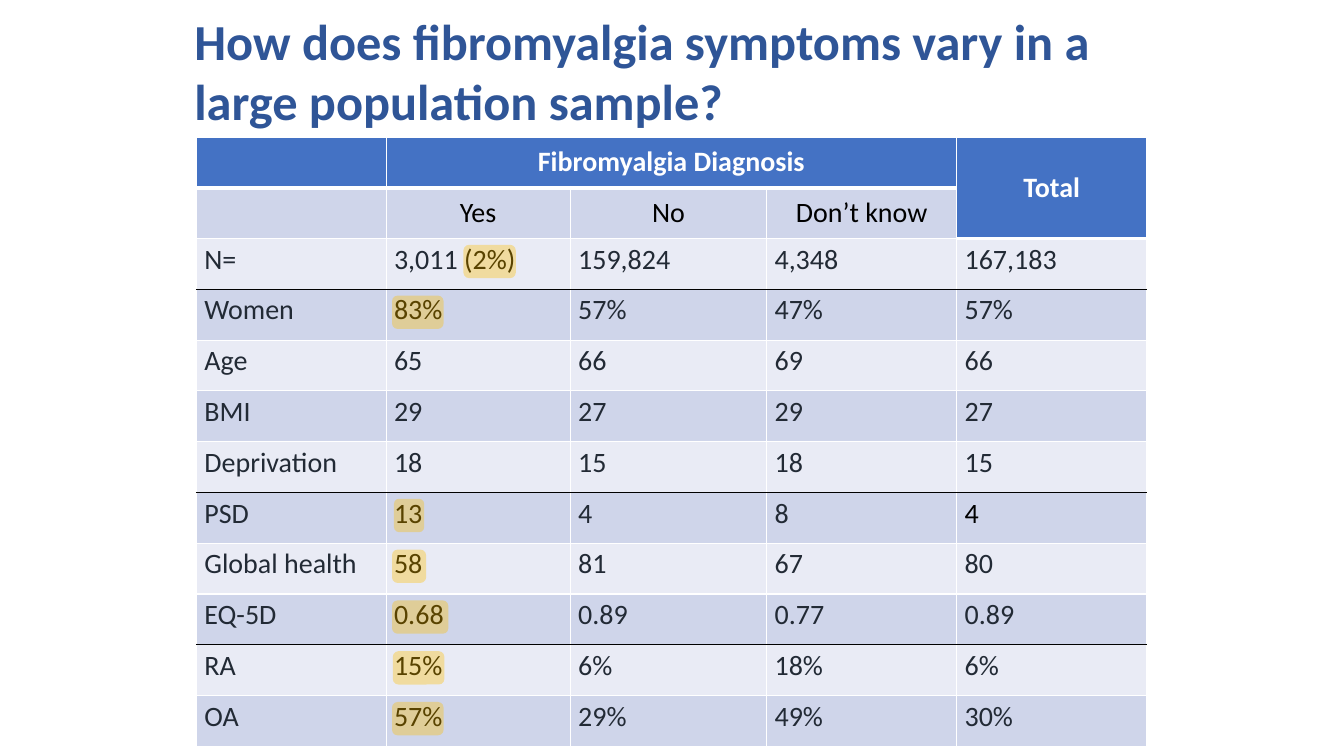
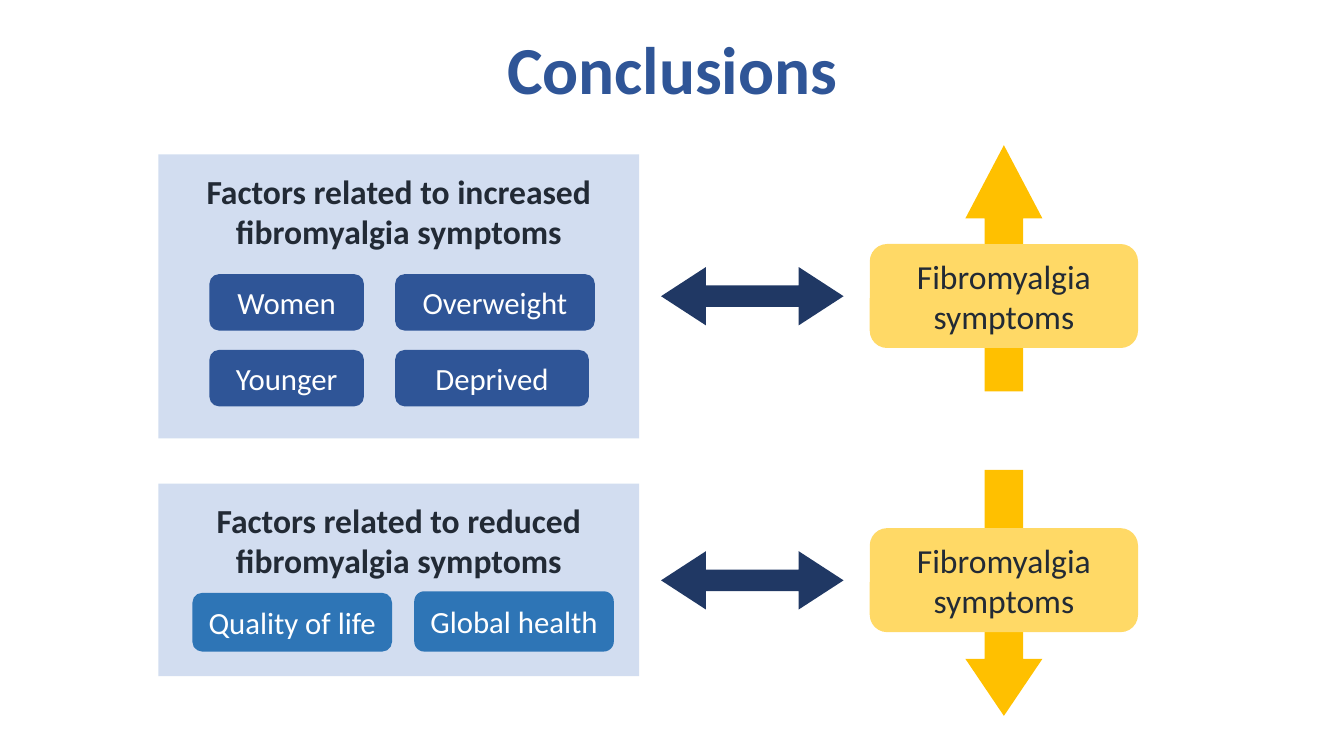
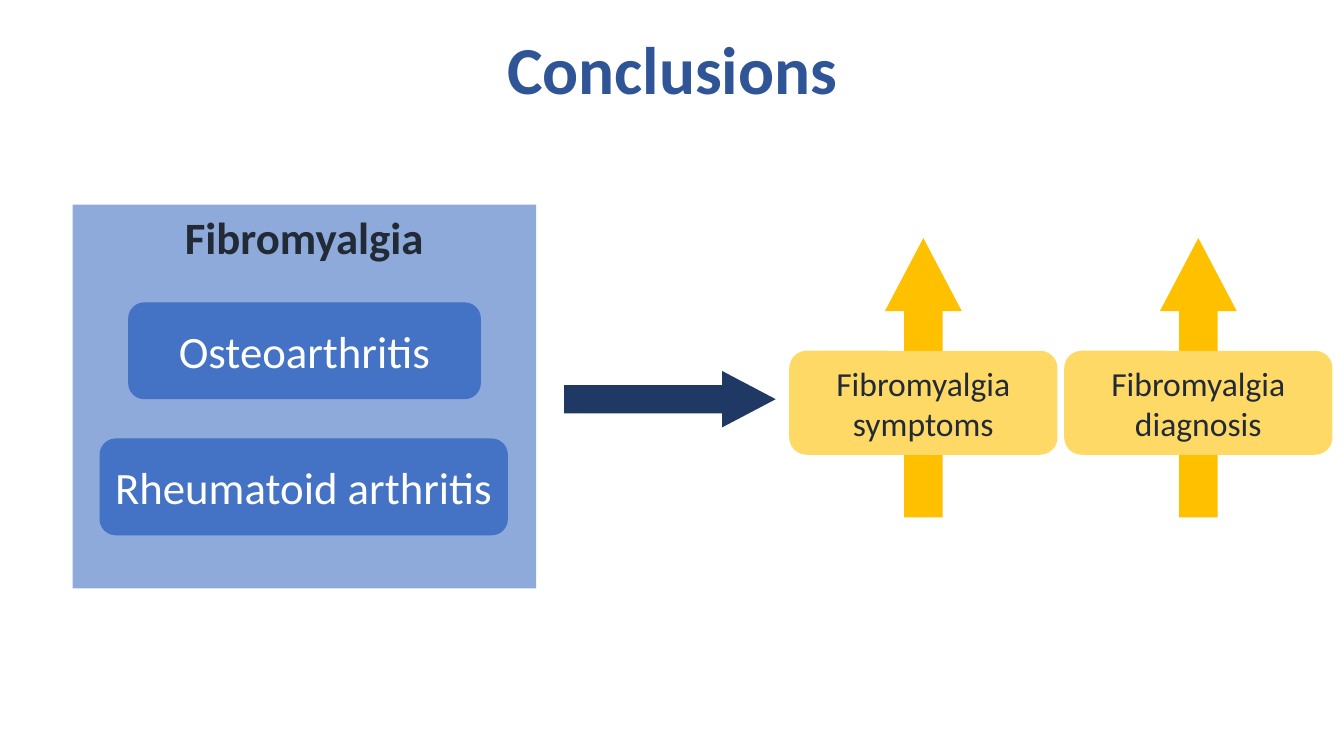
from dataclasses import dataclass
from functools import partial

from lxml import etree
from pptx import Presentation
from pptx import util as u
from pptx.dml.color import RGBColor
from pptx.enum import shapes, text
from pptx.oxml import ns
from pptx.slide import Slide

FONT = "Calibri"
WHITE = RGBColor(0xFF, 0xFF, 0xFF)
BLACK = RGBColor(0x00, 0x00, 0x00)
INK = RGBColor(0x22, 0x2A, 0x35)
TITLE_BLUE = RGBColor(0x2F, 0x55, 0x97)
NAVY = RGBColor(0x20, 0x38, 0x64)
BLUE = RGBColor(0x44, 0x72, 0xC4)
BRIGHT_BLUE = RGBColor(0x2E, 0x75, 0xB6)
PALE_BLUE = RGBColor(0xB4, 0xC7, 0xE7)
BAND_DARK = RGBColor(0xCF, 0xD5, 0xEA)
BAND_LIGHT = RGBColor(0xE9, 0xEB, 0xF5)
GOLD = RGBColor(0xFF, 0xC0, 0x00)
PALE_GOLD = RGBColor(0xFF, 0xD9, 0x66)

SHAPE = shapes.MSO_SHAPE
TOP = text.MSO_ANCHOR.TOP
MIDDLE = text.MSO_ANCHOR.MIDDLE
LEFT = text.PP_ALIGN.LEFT
CENTER = text.PP_ALIGN.CENTER

TABLE_LEFT, TABLE_TOP, ROW_HEIGHT = 4.95, 3.45, 1.28
COLUMN_WIDTHS = (4.78, 4.64, 4.95, 4.79, 4.79)
TABLE_ROWS = (
    ("", "Fibromyalgia Diagnosis", "", "", "Total"),
    ("", "Yes", "No", "Don’t know", ""),
    ("N=", "3,011 (2%)", "159,824", "4,348", "167,183"),
    ("Women", "83%", "57%", "47%", "57%"),
    ("Age", "65", "66", "69", "66"),
    ("BMI", "29", "27", "29", "27"),
    ("Deprivation", "18", "15", "18", "15"),
    ("PSD", "13", "4", "8", "4"),
    ("Global health", "58", "81", "67", "80"),
    ("EQ-5D", "0.68", "0.89", "0.77", "0.89"),
    ("RA", "15%", "6%", "18%", "6%"),
    ("OA", "57%", "29%", "49%", "30%"),
)
GROUP_END_ROWS = (2, 6, 9)
BLACK_CELLS = {(row, 1) for row in (3, 7, 8, 9, 10, 11)} | {(7, 4)}


@dataclass(frozen=True)
class Highlight:
    row: int
    left: float
    width: float


HIGHLIGHTS = (
    Highlight(2, 11.68, 1.32),
    Highlight(3, 9.88, 1.3),
    Highlight(7, 9.93, 0.76),
    Highlight(8, 9.88, 0.86),
    Highlight(9, 9.88, 1.42),
    Highlight(10, 9.9, 1.3),
    Highlight(11, 9.88, 1.3),
)


@dataclass(frozen=True)
class Block:
    left: float
    top: float
    width: float
    height: float
    fill: RGBColor
    label: str = ""
    size: float = 24
    color: RGBColor = WHITE
    bold: bool = False
    kind: SHAPE = SHAPE.ROUNDED_RECTANGLE
    adjustments: tuple[float, ...] = ()
    opacity: int = 100
    anchor: text.MSO_ANCHOR = MIDDLE
    inset_top: float = 0.13


Panel = partial(Block, color=INK, bold=True, adjustments=(0.0,), opacity=60, anchor=TOP)
Chip = partial(Block, size=22)
Badge = partial(Block, width=6.76, height=2.62, fill=PALE_GOLD, color=INK)
DoubleArrow = partial(Block, left=16.66, width=4.6, height=1.47, fill=NAVY,
                      kind=SHAPE.LEFT_RIGHT_ARROW, adjustments=(0.37, 0.77))


def style_text(paragraph, size: float, color: RGBColor, bold: bool = False,
               alignment: text.PP_ALIGN = CENTER) -> None:
    paragraph.alignment = alignment
    for run in paragraph.runs:
        run.font.name = FONT
        run.font.size = u.Pt(size)
        run.font.bold = bold
        run.font.color.rgb = color


def add_block(slide: Slide, block: Block) -> None:
    shape = slide.shapes.add_shape(block.kind, u.Cm(block.left), u.Cm(block.top),
                                   u.Cm(block.width), u.Cm(block.height))
    shape.shadow.inherit = False
    for index, value in enumerate(block.adjustments):
        shape.adjustments[index] = value
    shape.fill.solid()
    shape.fill.fore_color.rgb = block.fill
    shape.line.fill.background()
    if block.opacity < 100:
        color = shape.element.spPr.find(".//" + ns.qn("a:srgbClr"))
        etree.SubElement(color, ns.qn("a:alpha"), val=str(block.opacity * 1000))
    if block.label:
        frame = shape.text_frame
        frame.word_wrap = True
        frame.vertical_anchor = block.anchor
        frame.margin_top = u.Cm(block.inset_top)
        frame.text = block.label
        style_text(frame.paragraphs[0], block.size, block.color, block.bold)


def add_outcome(slide: Slide, label: str, left: float, top: float, arrow_top: float,
                arrow_height: float, kind: SHAPE, head: float) -> None:
    add_block(slide, Block(left + 2.41, arrow_top, 1.94, arrow_height, GOLD,
                           kind=kind, adjustments=(0.5, head)))
    add_block(slide, Badge(left=left, top=top, label=label))


def add_title(slide: Slide, title: str, left: float, top: float, width: float, height: float,
              size: float, alignment: text.PP_ALIGN, anchor: text.MSO_ANCHOR,
              spacing: float) -> None:
    box = slide.shapes.add_textbox(u.Cm(left), u.Cm(top), u.Cm(width), u.Cm(height))
    frame = box.text_frame
    frame.word_wrap = True
    frame.vertical_anchor = anchor
    frame.text = title
    frame.paragraphs[0].line_spacing = spacing
    style_text(frame.paragraphs[0], size, TITLE_BLUE, True, alignment)


add_conclusions_title = partial(add_title, title="Conclusions", left=2.34, top=0.08, width=29.21,
                                height=3.53, size=48, alignment=CENTER, anchor=MIDDLE, spacing=0.9)


def add_border(cell, index: int, side: str, color: RGBColor, width: float) -> None:
    line = etree.Element(ns.qn(f"a:ln{side}"), w=str(u.Pt(width)))
    fill = etree.SubElement(line, ns.qn("a:solidFill"))
    etree.SubElement(fill, ns.qn("a:srgbClr"), val=str(color))
    cell._tc.get_or_add_tcPr().insert(index, line)


def edge_below(row: int, is_header: bool) -> tuple[RGBColor, float]:
    if row in GROUP_END_ROWS:
        return BLACK, 1
    return WHITE, 3 if is_header else 1


def is_header_cell(row: int, column: int) -> bool:
    return row == 0 or (row == 1 and column == 4)


def style_cell(cell, row: int, column: int) -> None:
    header = is_header_cell(row, column)
    cell.fill.solid()
    cell.fill.fore_color.rgb = BLUE if header else (BAND_DARK if row % 2 else BAND_LIGHT)
    cell.margin_left = cell.margin_right = u.Cm(0.2)
    cell.margin_top = cell.margin_bottom = u.Cm(0.1)
    cell.vertical_anchor = MIDDLE if row < 2 else TOP
    color = WHITE if header else BLACK if row == 1 or (row, column) in BLACK_CELLS else INK
    style_text(cell.text_frame.paragraphs[0], 20, color, header, CENTER if row < 2 else LEFT)
    borders = (
        ("L", (WHITE, 1)),
        ("R", (WHITE, 1)),
        ("T", edge_below(row - 1, row > 0 and is_header_cell(row - 1, column))),
        ("B", edge_below(row, header)),
    )
    for index, (side, edge) in enumerate(borders):
        add_border(cell, index, side, *edge)


def add_symptom_table(slide: Slide) -> None:
    table = slide.shapes.add_table(
        len(TABLE_ROWS), len(COLUMN_WIDTHS), u.Cm(TABLE_LEFT), u.Cm(TABLE_TOP),
        u.Cm(sum(COLUMN_WIDTHS)), u.Cm(ROW_HEIGHT * len(TABLE_ROWS))).table
    for column, width in zip(table.columns, COLUMN_WIDTHS):
        column.width = u.Cm(width)
    for row_index, values in enumerate(TABLE_ROWS):
        table.rows[row_index].height = u.Cm(ROW_HEIGHT)
        for column_index, value in enumerate(values):
            cell = table.cell(row_index, column_index)
            cell.text = value
            style_cell(cell, row_index, column_index)
    count = table.cell(2, 1).text_frame.paragraphs[0]
    count.text = "3,011 "
    count.add_run().text = "(2%)"
    style_text(count, 20, INK, alignment=LEFT)
    count.runs[1].font.color.rgb = BLACK
    table.cell(0, 1).merge(table.cell(0, 3))
    table.cell(0, 4).merge(table.cell(1, 4))


def build_symptoms(slide: Slide) -> None:
    add_symptom_table(slide)
    add_title(slide, "How does fibromyalgia symptoms vary in a large population sample?",
              4.65, 0.13, 25.91, 3.33, 36, LEFT, TOP, 1.0)
    for mark in HIGHLIGHTS:
        top = TABLE_TOP + mark.row * ROW_HEIGHT + 0.16
        add_block(slide, Block(mark.left, top, mark.width, 0.84, GOLD, opacity=35))


def build_factors(slide: Slide) -> None:
    add_conclusions_title(slide)
    for direction, top, height in (("increased", 3.89, 7.16), ("reduced", 12.19, 4.85)):
        add_block(slide, Panel(3.99, top, 12.12, height, PALE_BLUE,
                               f"Factors related to {direction} fibromyalgia symptoms",
                               inset_top=0.41))
    chips = (
        Chip(5.28, 6.91, 3.89, 1.42, TITLE_BLUE, "Women"),
        Chip(9.96, 6.91, 5.03, 1.42, TITLE_BLUE, "Overweight"),
        Chip(5.28, 8.82, 3.89, 1.42, TITLE_BLUE, "Younger"),
        Chip(9.96, 8.82, 4.88, 1.42, TITLE_BLUE, "Deprived"),
        Chip(4.85, 14.94, 5.03, 1.48, BRIGHT_BLUE, "Quality of life"),
        Chip(10.44, 14.9, 5.03, 1.52, BRIGHT_BLUE, "Global health"),
    )
    for chip in chips:
        add_block(slide, chip)
    outcomes = (
        (6.15, 3.66, SHAPE.UP_ARROW, 0.95),
        (13.31, 11.84, SHAPE.DOWN_ARROW, 0.74),
    )
    for top, arrow_top, kind, head in outcomes:
        add_outcome(slide, "Fibromyalgia symptoms", 21.92, top, arrow_top, 6.2, kind, head)
        add_block(slide, DoubleArrow(top=top + 0.58))


def build_comorbidities(slide: Slide) -> None:
    add_conclusions_title(slide)
    blocks = (
        Panel(1.83, 5.16, 11.68, 9.67, BLUE, "Fibromyalgia", size=32),
        Chip(3.23, 7.62, 8.89, 2.44, BLUE, "Osteoarthritis", size=32),
        Chip(2.51, 11.05, 10.29, 2.44, BLUE, "Rheumatoid arthritis", size=32),
        Block(14.22, 9.35, 5.33, 1.42, NAVY, kind=SHAPE.RIGHT_ARROW, adjustments=(0.5, 0.95)),
    )
    for block in blocks:
        add_block(slide, block)
    for left, outcome in ((19.89, "symptoms"), (26.82, "diagnosis")):
        add_outcome(slide, f"Fibromyalgia {outcome}", left, 8.84, 6.0, 7.04,
                    SHAPE.UP_ARROW, 0.95)


def main() -> None:
    presentation = Presentation()
    presentation.slide_width = u.Cm(33.87)
    presentation.slide_height = u.Cm(19.05)
    for build in (build_symptoms, build_factors, build_comorbidities):
        build(presentation.slides.add_slide(presentation.slide_layouts[6]))
    presentation.save("out.pptx")


if __name__ == "__main__":
    main()
